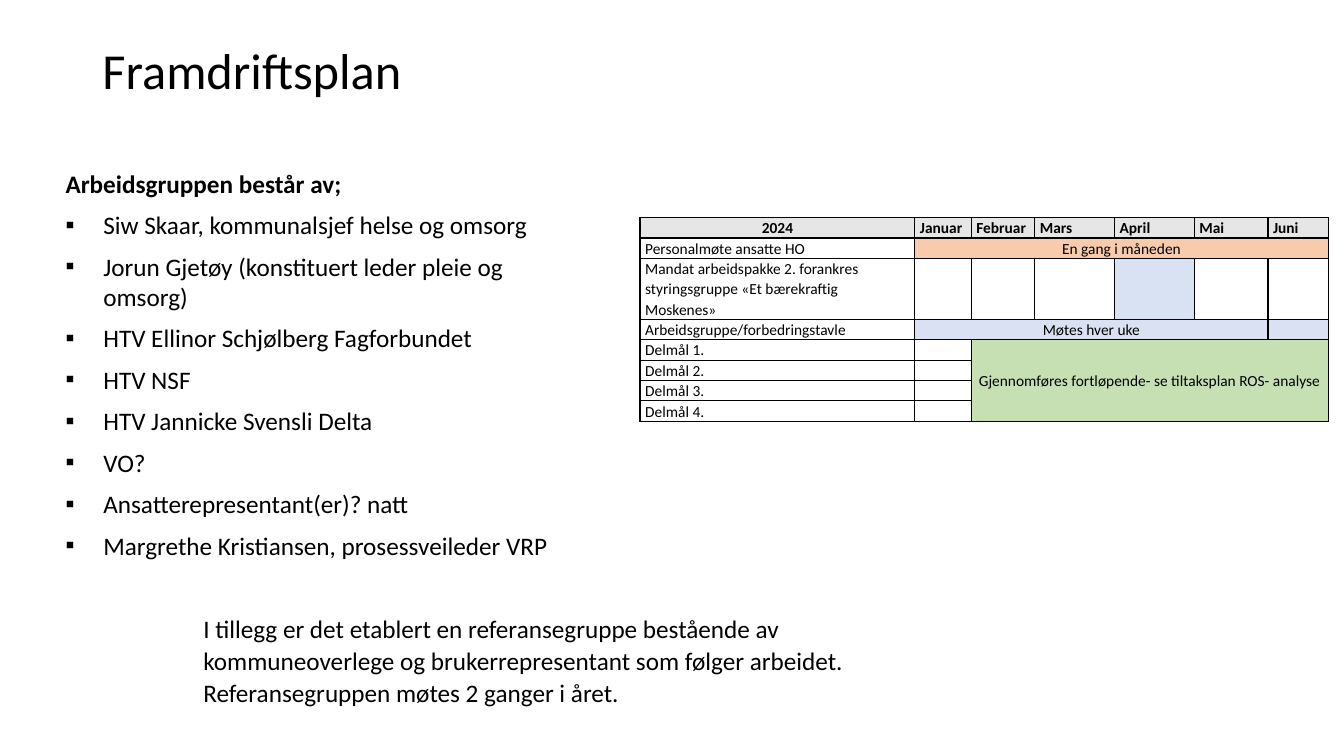
from lxml.etree import SubElement
from pptx import Presentation
from pptx.dml.color import RGBColor
from pptx.enum.text import MSO_ANCHOR as Anchor, MSO_AUTO_SIZE as AutoSize, PP_ALIGN as Align
from pptx.oxml import parse_xml
from pptx.oxml.ns import nsdecls, qn
from pptx.util import Pt

BLACK = RGBColor(0x00, 0x00, 0x00)
WHITE = RGBColor(0xFF, 0xFF, 0xFF)
GREY = RGBColor(0xE7, 0xE6, 0xE6)
ORANGE = RGBColor(0xF8, 0xCB, 0xAD)
APRIL_BLUE = RGBColor(0xD9, 0xE2, 0xF3)
WEEKLY_BLUE = RGBColor(0xD9, 0xE1, 0xF2)
GREEN = RGBColor(0xC6, 0xE0, 0xB4)


def write(paragraph, text, size, bold=False, align=Align.LEFT, spacing=1.0, after=8):
    paragraph.alignment = align
    paragraph.line_spacing = spacing
    paragraph.space_before = Pt(0)
    paragraph.space_after = Pt(after)
    if not text:
        SubElement(paragraph._p, qn("a:endParaRPr"), sz=str(size * 100))
        return
    run = paragraph.add_run()
    run.text = text
    run.font.name = "Calibri"
    run.font.size = Pt(size)
    run.font.bold = bold
    run.font.color.rgb = BLACK


def place(shape, left, top, width, height):
    shape.left, shape.top = Pt(left), Pt(top)
    shape.width, shape.height = Pt(width), Pt(height)
    shape.text_frame.word_wrap = True
    shape.text_frame.auto_size = AutoSize.NONE


prs = Presentation()
prs.slide_width, prs.slide_height = Pt(960), Pt(540)
slide = prs.slides.add_slide(prs.slide_layouts[1])

# Title
title = slide.shapes.title
place(title, 66, 14.4, 828, 76.3)
title.text_frame.vertical_anchor = Anchor.MIDDLE
write(title.text_frame.paragraphs[0], "Framdriftsplan", 36, spacing=0.9, after=0)

# Progress plan: row label followed by (first column, text, fill, rows, columns)
header = ["2024", "Januar", "Februar", "Mars", "April", "Mai", "Juni"]
labels = [
    "Personalmøte ansatte HO",
    "Mandat arbeidspakke 2. forankres styringsgruppe «Et bærekraftig Moskenes»",
    "Arbeidsgruppe/forbedringstavle",
    *[f"Delmål {number}." for number in range(1, 5)],
]
column_widths = [196.3, 40.3, 45.4, 57, 57, 52.6, 43]
row_heights = [14.4, 14.4, 43.4] + [14.4] * 5
plan = slide.shapes.add_table(
    8, 7, Pt(457.2), Pt(155.5), Pt(sum(column_widths)), Pt(sum(row_heights))
).table
for column, width in zip(plan.columns, column_widths):
    column.width = Pt(width)
for row, height in zip(plan.rows, row_heights):
    row.height = Pt(height)

contents = {(0, month): name for month, name in enumerate(header)}
contents |= {(row, 0): label for row, label in enumerate(labels, 1)}
fills = {(0, month): GREY for month in range(7)}
fills |= {(2, 4): APRIL_BLUE, (3, 6): WEEKLY_BLUE}

# Activities that run over several months
activities = [
    (1, 1, 1, 6, "En gang i måneden", ORANGE),
    (3, 1, 3, 5, "Møtes hver uke", WEEKLY_BLUE),
    (4, 2, 7, 6, "Gjennomføres fortløpende- se tiltaksplan ROS- analyse", GREEN),
]
centred = {(0, 0)}
for top, first, bottom, last, activity, colour in activities:
    plan.cell(top, first).merge(plan.cell(bottom, last))
    contents[top, first] = activity
    centred.add((top, first))
    for row in range(top, bottom + 1):
        for month in range(first, last + 1):
            fills[row, month] = colour

for row in range(8):
    for month in range(7):
        cell = plan.cell(row, month)
        cell.margin_left = cell.margin_right = Pt(3.6)
        cell.margin_top = cell.margin_bottom = Pt(0)
        cell.vertical_anchor = Anchor.MIDDLE if (row, month) == (4, 2) else Anchor.BOTTOM
        cell.fill.solid()
        cell.fill.fore_color.rgb = fills.get((row, month), WHITE)
        align = Align.CENTER if (row, month) in centred else Align.LEFT
        write(cell.text_frame.paragraphs[0], contents.get((row, month), ""), 11,
              bold=row == 0, align=align, spacing=1.07)
        for position, side in enumerate(("lnL", "lnR", "lnT", "lnB")):
            border = parse_xml(
                f'<a:{side} {nsdecls("a")} w="12700"><a:solidFill>'
                f'<a:srgbClr val="{BLACK}"/></a:solidFill></a:{side}>'
            )
            cell._tc.get_or_add_tcPr().insert(position, border)

# Working group
members = [
    "Siw Skaar, kommunalsjef helse og omsorg",
    "Jorun Gjetøy (konstituert leder pleie og omsorg)",
    "HTV Ellinor Schjølberg Fagforbundet",
    "HTV NSF",
    "HTV Jannicke Svensli Delta",
    "VO?",
    "Ansatterepresentant(er)? natt",
    "Margrethe Kristiansen, prosessveileder VRP",
]
group = slide.placeholders[1]
place(group, 39.6, 116.6, 383.8, 290.2)
heading = group.text_frame.paragraphs[0]
write(heading, "Arbeidsgruppen består av;", 18, bold=True)
heading_format = heading._p.get_or_add_pPr()
heading_format.set("marL", "0")
heading_format.set("indent", "0")
SubElement(heading_format, qn("a:buNone"))
for member in members:
    item = group.text_frame.add_paragraph()
    write(item, member, 18)
    item_format = item._p.get_or_add_pPr()
    item_format.set("marL", str(Pt(27)))
    item_format.set("indent", str(-Pt(27)))
    SubElement(item_format, qn("a:buFont"), typeface="Calibri")
    SubElement(item_format, qn("a:buChar"), char="▪")

# Reference group
reference = slide.shapes.add_textbox(0, 0, 0, 0)
place(reference, 138.2, 432.7, 480.2, 76.3)
write(
    reference.text_frame.paragraphs[0],
    "I tillegg er det etablert en referansegruppe bestående av kommuneoverlege og "
    "brukerrepresentant som følger arbeidet. Referansegruppen møtes 2 ganger i året.",
    18, spacing=1.07,
)

prs.save("out.pptx")
